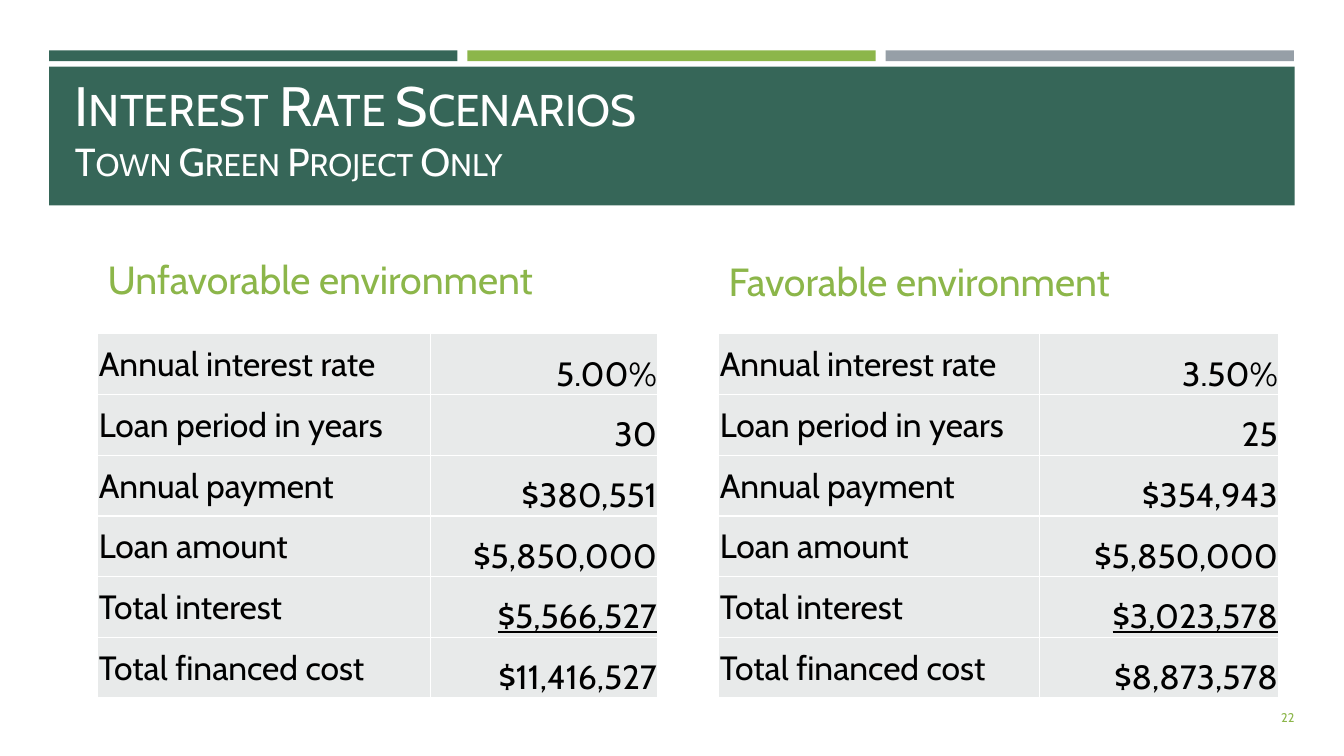
import pptx
import pptx.util
import pptx.dml.color
import pptx.enum.shapes
import pptx.enum.text
import pptx.oxml.ns
import lxml.etree

Cm = pptx.util.Cm
ALIGN = pptx.enum.text.PP_ALIGN
ANCHOR = pptx.enum.text.MSO_ANCHOR
COLORS = {"forest": "366658", "lime": "8CB64A", "slate": "969FA7",
          "cell": "E8EAEA", "white": "FFFFFF", "black": "000000"}
LABELS = ["Annual interest rate", "Loan period in years", "Annual payment",
          "Loan amount", "Total interest", "Total financed cost"]
SCENARIOS = [
    ("Unfavorable environment", 2.46, 1.5, (8.38, 5.74),
     ["5.00%", "30", "$380,551", "$5,850,000", "$5,566,527", "$11,416,527"]),
    ("Favorable environment", 18.11, 1.55, (8.08, 6.04),
     ["3.50%", "25", "$354,943", "$5,850,000", "$3,023,578", "$8,873,578"]),
]


class SlideBuilder:
    """Draws styled elements on the current slide."""

    font_name = "Cabin"

    def __init__(self, page):
        self.page = page

    def color(self, name):
        return pptx.dml.color.RGBColor.from_string(COLORS[name])

    def style(self, font, size, color):
        font.name = self.font_name
        font.size = pptx.util.Pt(size)
        font.bold = False
        font.color.rgb = self.color(color)

    def place(self, shape, left, top, width, height):
        shape.left, shape.top = Cm(left), Cm(top)
        shape.width, shape.height = Cm(width), Cm(height)

    def bar(self, left, top, width, height, color):
        box = self.page.shapes.add_shape(
            pptx.enum.shapes.MSO_SHAPE.RECTANGLE,
            Cm(left), Cm(top), Cm(width), Cm(height))
        box.shadow.inherit = False
        box.fill.solid()
        box.fill.fore_color.rgb = self.color(color)
        box.line.fill.background()
        self.page.shapes._spTree.insert(2, box._element)

    def title(self, lines):
        box = self.page.shapes.title
        self.place(box, 1.63, 2.03, 30.63, 2.74)
        box.text_frame.vertical_anchor = ANCHOR.BOTTOM
        para = box.text_frame.paragraphs[0]
        para.alignment = ALIGN.LEFT
        for index, (text, size) in enumerate(lines):
            if index:
                para.add_line_break()
            span = para.add_run()
            span.text = text
            self.style(span.font, size, "white")
            span._r.get_or_add_rPr().set("cap", "small")

    def heading(self, box, text, left, height):
        self.place(box, left, 6.25, 14.12, height)
        box.text_frame.vertical_anchor = ANCHOR.BOTTOM
        para = box.text_frame.paragraphs[0]
        para.text = text
        para.space_after = pptx.util.Pt(6)
        self.style(para.font, 28, "lime")

    def cell(self, cell, text, align, anchor, underline):
        cell.fill.solid()
        cell.fill.fore_color.rgb = self.color("cell")
        cell.margin_left = cell.margin_right = cell.margin_top = Cm(0.03)
        cell.margin_bottom = 0
        cell.vertical_anchor = anchor
        para = cell.text_frame.paragraphs[0]
        para.text = text
        para.alignment = align
        self.style(para.font, 24, "black")
        if underline:
            para.font.underline = True
        qn = pptx.oxml.ns.qn
        properties = cell._tc.get_or_add_tcPr()
        for index, side in enumerate(("a:lnL", "a:lnR", "a:lnT", "a:lnB")):
            border = lxml.etree.Element(qn(side), w="12700")
            fill = lxml.etree.SubElement(border, qn("a:solidFill"))
            lxml.etree.SubElement(fill, qn("a:srgbClr"), val=COLORS["white"])
            properties.insert(index, border)

    def table(self, left, widths, values):
        table = self.page.shapes.add_table(
            len(values), 2, Cm(left), Cm(8.41),
            Cm(sum(widths)), Cm(1.53 * len(values))).table
        table.first_row = table.horz_banding = False
        for column, width in zip(table.columns, widths):
            column.width = Cm(width)
        for row, (label, value) in enumerate(zip(LABELS, values)):
            self.cell(table.cell(row, 0), label, ALIGN.LEFT, ANCHOR.MIDDLE, False)
            self.cell(table.cell(row, 1), value, ALIGN.RIGHT, ANCHOR.BOTTOM,
                      label == "Total interest")

    def page_number(self, text):
        box = self.page.shapes.add_textbox(Cm(29.95), Cm(17.58), Cm(2.92), Cm(1.02))
        box.text_frame.word_wrap = True
        box.text_frame.vertical_anchor = ANCHOR.MIDDLE
        para = box.text_frame.paragraphs[0]
        para.text = text
        para.alignment = ALIGN.RIGHT
        self.style(para.font, 9, "lime")


def main():
    deck = pptx.Presentation()
    deck.slide_width, deck.slide_height = Cm(33.87), Cm(19.05)
    page = deck.slides.add_slide(deck.slide_layouts.get_by_name("Comparison"))
    _, left_heading, left_content, right_heading, right_content = page.placeholders
    for unused in (left_content, right_content):
        unused._element.getparent().remove(unused._element)

    builder = SlideBuilder(page)
    for index, color in enumerate(("forest", "lime", "slate")):
        builder.bar(1.24 + 10.54 * index, 1.27, 10.29, 0.27, color)
    builder.bar(1.24, 1.68, 31.39, 3.5, "forest")
    builder.title([("Interest Rate Scenarios", 39.6), ("Town Green Project Only", 27.9)])
    for box, scenario in zip((left_heading, right_heading), SCENARIOS):
        text, left, height, widths, values = scenario
        builder.heading(box, text, left, height)
        builder.table(left, widths, values)
    builder.page_number("22")
    deck.save("out.pptx")


if __name__ == "__main__":
    main()
